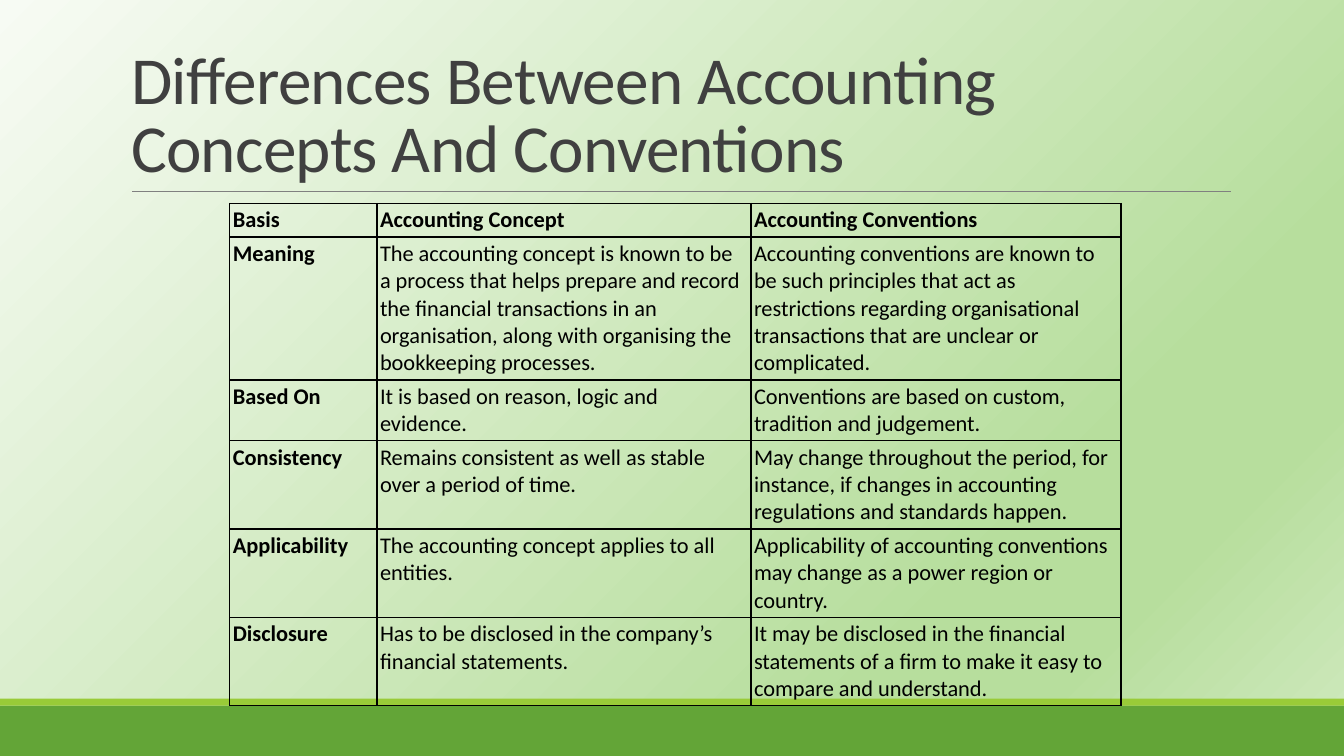
from lxml.etree import SubElement
from pptx import Presentation
from pptx.dml.color import RGBColor
from pptx.enum.shapes import MSO_CONNECTOR, MSO_SHAPE
from pptx.enum.text import MSO_ANCHOR, MSO_AUTO_SIZE, PP_ALIGN
from pptx.oxml.ns import qn
from pptx.util import Inches, Pt

WIDTH, HEIGHT = Inches(13.33), Inches(7.5)
FONT = "Calibri"
BLACK = RGBColor(0x00, 0x00, 0x00)
TITLE_GREY = RGBColor(0x40, 0x40, 0x40)
RULE_GREY = RGBColor(0x80, 0x80, 0x80)
GREEN = RGBColor(0x63, 0xA5, 0x37)
LIME = RGBColor(0x99, 0xCB, 0x38)
PALE = RGBColor(0xF7, 0xFB, 0xF4)
LEAF = RGBColor(0xB7, 0xDE, 0x9D)
MINT = RGBColor(0xCF, 0xE9, 0xBE)
BACKGROUND_STOPS = [(0, PALE), (74, LEAF), (83, LEAF), (100, MINT)]

COLUMN_SHARES = [10.95, 27.83, 27.53]
ROW_SHARES = [4, 17.2, 7.33, 10.53, 8.93, 10.53]
ROWS = [
    ("Basis", "Accounting Concept", "Accounting Conventions"),
    ("Meaning",
     "The accounting concept is known to be a process that helps prepare and record "
     "the financial transactions in an organisation, along with organising the "
     "bookkeeping processes.",
     "Accounting conventions are known to be such principles that act as restrictions "
     "regarding organisational transactions that are unclear or complicated."),
    ("Based On",
     "It is based on reason, logic and evidence.",
     "Conventions are based on custom, tradition and judgement."),
    ("Consistency",
     "Remains consistent as well as stable over a period of time.",
     "May change throughout the period, for instance, if changes in accounting "
     "regulations and standards happen."),
    ("Applicability",
     "The accounting concept applies to all entities.",
     "Applicability of accounting conventions may change as a power region or country."),
    ("Disclosure",
     "Has to be disclosed in the company’s financial statements.",
     "It may be disclosed in the financial statements of a firm to make it easy to "
     "compare and understand."),
]


def across(share):
    return int(WIDTH * share / 100)


def down(share):
    return int(HEIGHT * share / 100)


def set_background(s):
    s.background.fill.gradient()
    grad = s.element.find(".//" + qn("a:gradFill"))
    for child in list(grad):
        grad.remove(child)
    stops = SubElement(grad, qn("a:gsLst"))
    for position, color in BACKGROUND_STOPS:
        stop = SubElement(stops, qn("a:gs"), pos=str(position * 1000))
        SubElement(stop, qn("a:srgbClr"), val=str(color))
    circle = SubElement(grad, qn("a:path"))
    circle.set("path", "circle")
    SubElement(circle, qn("a:fillToRect"), r="100000", b="100000")


def add_bar(s, top, height, color):
    bar = s.shapes.add_shape(MSO_SHAPE.RECTANGLE, 0, down(top), WIDTH, down(height))
    bar.shadow.inherit = False
    bar.fill.solid()
    bar.fill.fore_color.rgb = color
    bar.line.fill.background()


def add_rule(s, left, right, top):
    rule = s.shapes.add_connector(
        MSO_CONNECTOR.STRAIGHT, across(left), down(top), across(right), down(top))
    rule.line.color.rgb = RULE_GREY
    rule.line.width = Pt(0.5)
    SubElement(rule._element.spPr, qn("a:effectLst"))


def format_run(r, size, color, bold=False):
    r.font.name = FONT
    r.font.size = Pt(size)
    r.font.color.rgb = color
    r.font.bold = bold


def set_title(s, text):
    title = s.shapes.title
    title.left, title.top = across(9), down(4.13)
    title.width, title.height = across(82.52), down(21.2)
    tf = title.text_frame
    tf.text = text
    tf.word_wrap = True
    tf.auto_size = MSO_AUTO_SIZE.NONE
    tf.vertical_anchor = MSO_ANCHOR.BOTTOM
    p = tf.paragraphs[0]
    p.alignment = PP_ALIGN.LEFT
    p.line_spacing = 0.85
    r = p.runs[0]
    format_run(r, 48, TITLE_GREY)
    r.font._element.set("spc", "-50")


def set_borders(cell):
    properties = cell._tc.get_or_add_tcPr()
    for index, side in enumerate(("lnL", "lnR", "lnT", "lnB")):
        border = SubElement(properties, qn("a:" + side), w=str(Pt(1)))
        fill = SubElement(border, qn("a:solidFill"))
        SubElement(fill, qn("a:srgbClr"), val=str(BLACK))
        properties.insert(index, border)


def fill_cell(cell, text, bold):
    cell.fill.background()
    cell.margin_left = cell.margin_right = Inches(0.03)
    cell.margin_top = cell.margin_bottom = Inches(0.03)
    cell.text_frame.text = text
    format_run(cell.text_frame.paragraphs[0].runs[0], 16, BLACK, bold)
    set_borders(cell)


def add_comparison_table(s):
    table = s.shapes.add_table(
        len(ROWS), len(COLUMN_SHARES), across(17.1), down(26.93),
        across(sum(COLUMN_SHARES)), down(sum(ROW_SHARES))).table
    table.horz_banding = False
    table.first_row = False
    for column, share in zip(table.columns, COLUMN_SHARES):
        column.width = across(share)
    for row, share in zip(table.rows, ROW_SHARES):
        row.height = down(share)
    for i, texts in enumerate(ROWS):
        for j, text in enumerate(texts):
            fill_cell(table.cell(i, j), text, bold=i == 0 or j == 0)


def main():
    prs = Presentation()
    prs.slide_width, prs.slide_height = WIDTH, HEIGHT
    s = prs.slides.add_slide(prs.slide_layouts[5])
    set_background(s)
    add_bar(s, 93.33, 6.67, GREEN)
    add_bar(s, 92.4, 0.93, LIME)
    add_rule(s, 9.83, 91.6, 25.33)
    set_title(s, "Differences Between Accounting Concepts And Conventions")
    add_comparison_table(s)
    prs.save("out.pptx")


if __name__ == "__main__":
    main()
